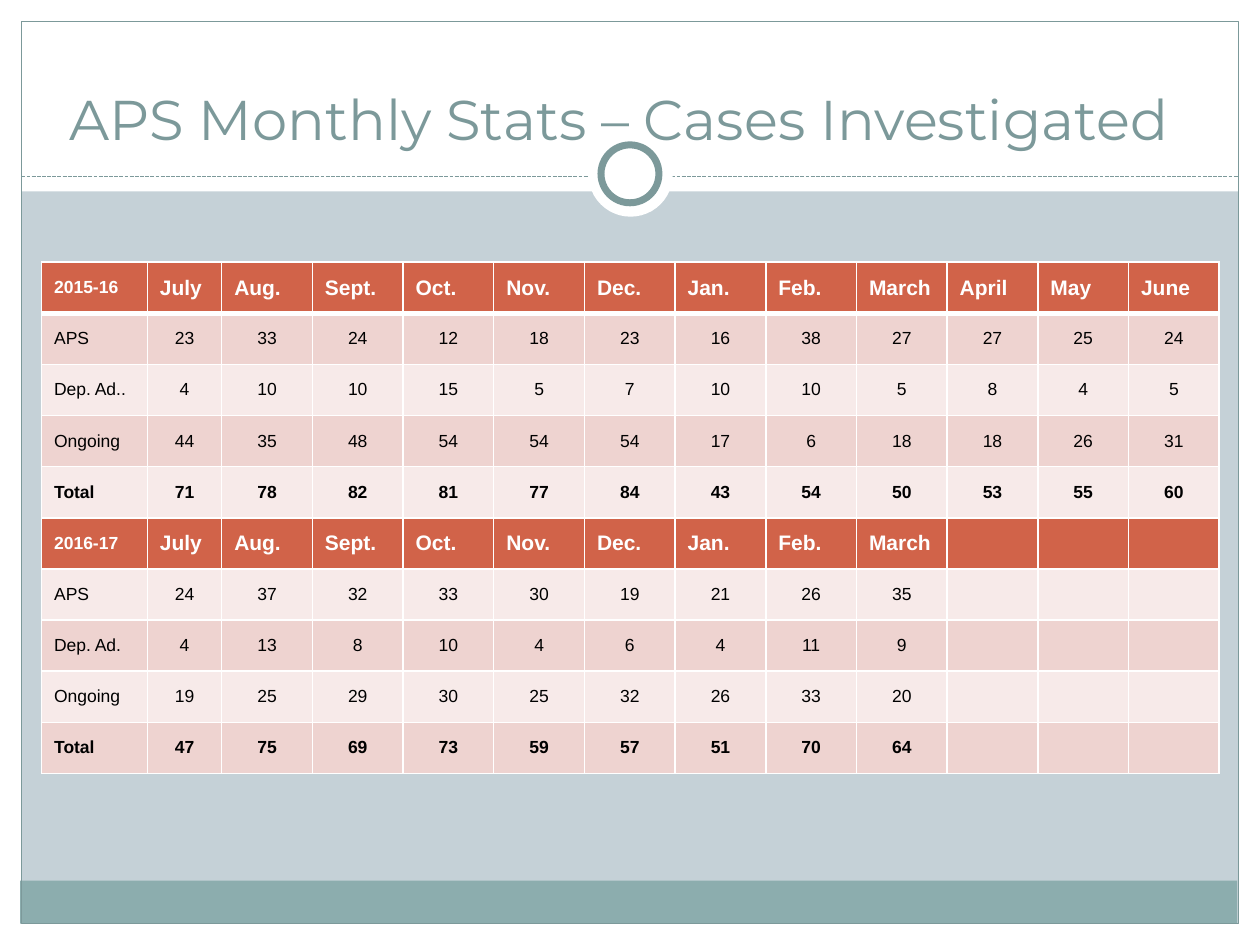
from lxml import etree
from pptx import Presentation
from pptx import util as u
from pptx.dml.color import RGBColor
from pptx.enum import dml, shapes, text
from pptx.oxml import ns

WHITE = RGBColor(0xFF, 0xFF, 0xFF)
BLACK = RGBColor(0x00, 0x00, 0x00)
BACKGROUND = RGBColor(0xC5, 0xD1, 0xD7)
SLATE = RGBColor(0x7C, 0x99, 0x9A)
TEAL = RGBColor(0x8C, 0xAD, 0xAE)
RUST = RGBColor(0xD1, 0x63, 0x49)
DARK_BAND = RGBColor(0xEE, 0xD3, 0xD0)
LIGHT_BAND = RGBColor(0xF7, 0xEA, 0xE9)

RECT = shapes.MSO_SHAPE.RECTANGLE
OVAL = shapes.MSO_SHAPE.OVAL

CASES = [
    ["2015-16", "July", "Aug.", "Sept.", "Oct.", "Nov.", "Dec.", "Jan.",
     "Feb.", "March", "April", "May", "June"],
    ["APS", 23, 33, 24, 12, 18, 23, 16, 38, 27, 27, 25, 24],
    ["Dep. Ad..", 4, 10, 10, 15, 5, 7, 10, 10, 5, 8, 4, 5],
    ["Ongoing", 44, 35, 48, 54, 54, 54, 17, 6, 18, 18, 26, 31],
    ["Total", 71, 78, 82, 81, 77, 84, 43, 54, 50, 53, 55, 60],
    ["2016-17", "July", "Aug.", "Sept.", "Oct.", "Nov.", "Dec.", "Jan.",
     "Feb.", "March", "", "", ""],
    ["APS", 24, 37, 32, 33, 30, 19, 21, 26, 35, "", "", ""],
    ["Dep. Ad.", 4, 13, 8, 10, 4, 6, 4, 11, 9, "", "", ""],
    ["Ongoing", 19, 25, 29, 30, 25, 32, 26, 33, 20, "", "", ""],
    ["Total", 47, 75, 69, 73, 59, 57, 51, 70, 64, "", "", ""],
]
HEADER_ROWS = (0, 5)

deck = Presentation()
deck.slide_width, deck.slide_height = u.Inches(10), u.Inches(7.5)
page = deck.slides.add_slide(deck.slide_layouts[6])
page.background.fill.solid()
page.background.fill.fore_color.rgb = BACKGROUND


def add_panel(kind, box, fill=None, line=None, width=0.75):
    panel = page.shapes.add_shape(kind, *[u.Inches(length) for length in box])
    panel.shadow.inherit = False
    if fill is None:
        panel.fill.background()
    else:
        panel.fill.solid()
        panel.fill.fore_color.rgb = fill
    if line is None:
        panel.line.fill.background()
    else:
        panel.line.color.rgb = line
        panel.line.width = u.Pt(width)


def add_border(cell, side, points):
    """Draw a white border on one side (L, R, T or B) of a table cell."""
    border = etree.SubElement(cell._tc.get_or_add_tcPr(), ns.qn("a:ln" + side),
                              w=str(u.Pt(points)))
    fill = etree.SubElement(border, ns.qn("a:solidFill"))
    etree.SubElement(fill, ns.qn("a:srgbClr"), val=str(WHITE))


# Page frame
for margin in [(0, 7.33, 10, 0.17), (0, 0, 10, 1.52),
               (0, 0, 0.17, 7.5), (9.83, 0, 0.17, 7.5)]:
    add_panel(RECT, margin, fill=WHITE)
add_panel(RECT, (0.16, 6.99, 9.66, 0.34), fill=TEAL)
add_panel(RECT, (0.17, 0.17, 9.66, 7.16), line=SLATE)

divider = page.shapes.add_connector(
    shapes.MSO_CONNECTOR.STRAIGHT,
    u.Inches(0.17), u.Inches(1.4), u.Inches(9.83), u.Inches(1.4))
divider.line.color.rgb = SLATE
divider.line.width = u.Pt(0.75)
divider.line.dash_style = dml.MSO_LINE.SQUARE_DOT
etree.SubElement(divider._element.spPr, ns.qn("a:effectLst"))

add_panel(OVAL, (4.67, 1.05, 0.67, 0.67), fill=WHITE)
add_panel(OVAL, (4.77, 1.15, 0.46, 0.46), fill=WHITE, line=SLATE, width=4)

# Title
title = page.shapes.add_textbox(u.Inches(0.25), u.Inches(0.42),
                                u.Inches(9.33), u.Inches(0.83)).text_frame
title.word_wrap = True
title.vertical_anchor = text.MSO_ANCHOR.BOTTOM
para = title.paragraphs[0]
para.text = "APS Monthly Stats – Cases Investigated"
para.alignment = text.PP_ALIGN.CENTER
para.font.name = "Montserrat"
para.font.size = u.Pt(32)
para.font.color.rgb = SLATE

# Monthly cases
table = page.shapes.add_table(
    len(CASES), len(CASES[0]), u.Inches(0.33), u.Inches(2.08),
    u.Inches(9.3), u.Inches(4.06)).table
for column, width in zip(table.columns, [0.84, 0.59] + [0.72] * 11):
    column.width = u.Inches(width)

for r, values in enumerate(CASES):
    is_header = r in HEADER_ROWS
    band = DARK_BAND if r % 2 else LIGHT_BAND
    for c, value in enumerate(values):
        cell = table.cell(r, c)
        add_border(cell, "L", 1)
        add_border(cell, "R", 1)
        add_border(cell, "T", 3 if r == 1 else 1)
        add_border(cell, "B", 3 if r == 0 else 1)
        cell.fill.solid()
        cell.fill.fore_color.rgb = RUST if is_header else band
        cell.vertical_anchor = text.MSO_ANCHOR.MIDDLE
        para = cell.text_frame.paragraphs[0]
        para.text = str(value)
        if c > 0 and not is_header:
            para.alignment = text.PP_ALIGN.CENTER
        para.font.name = "Arial"
        para.font.size = u.Pt(12 if is_header and c > 0 else 10)
        para.font.bold = is_header or values[0] == "Total"
        para.font.color.rgb = WHITE if is_header else BLACK

deck.save("out.pptx")
